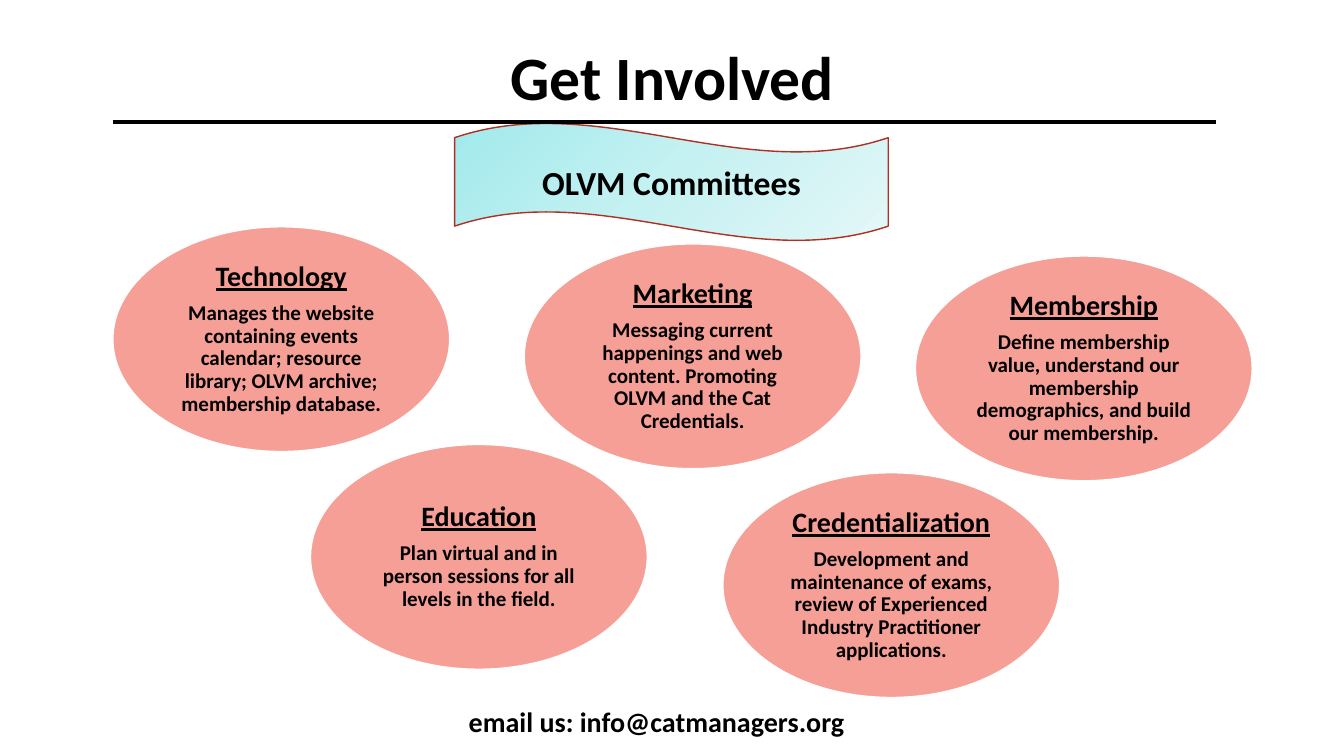
"""Builds the Get Involved slide with the OLVM committees."""
from copy import deepcopy

from lxml import etree
from pptx import Presentation
from pptx import util as u
from pptx.dml.color import RGBColor
from pptx.enum import shapes, text
from pptx.oxml.ns import qn

PX = u.Inches(1) // 100
THEME = {
    "font": "Calibri",
    "ink": RGBColor.from_string("000000"),
    "bubble": RGBColor.from_string("EC412E"),
    "bubble_alpha": "50000",
    "bubble_line": RGBColor.from_string("FFFFFF"),
    "banner_line": RGBColor.from_string("AF3022"),
    "banner_stops": [(0, "A2EAEC"), (50, "C6F1F2"), (100, "E3F7F8")],
    "title": 44, "banner": 24, "heading": 20, "body": 15,
}
CENTER, LEFT = text.PP_ALIGN.CENTER, text.PP_ALIGN.LEFT


def px(*lengths):
    return [length * PX for length in lengths]


def write(shape, paragraphs, inset, anchor=text.MSO_ANCHOR.MIDDLE):
    frame = shape.text_frame
    frame_format = {"word_wrap": True, "vertical_anchor": anchor}
    for side, margin in zip(("left", "top", "right", "bottom"), px(*inset)):
        frame_format[f"margin_{side}"] = margin
    for name, value in frame_format.items():
        setattr(frame, name, value)
    for index, (words, size, underline, paragraph_format) in enumerate(paragraphs):
        paragraph = frame.add_paragraph() if index else frame.paragraphs[0]
        for name, value in paragraph_format.items():
            setattr(paragraph, name, value)
        run = paragraph.add_run()
        run.text = words
        font_format = {"name": THEME["font"], "size": u.Pt(THEME[size]),
                       "bold": True, "underline": underline}
        for name, value in font_format.items():
            setattr(run.font, name, value)
        run.font.color.rgb = THEME["ink"]


presentation = Presentation()
presentation.slide_width, presentation.slide_height = px(1333, 750)
slide = presentation.slides.add_slide(presentation.slide_layouts[6])

BUBBLE_SIZE = (334, 223)
committees = [
    (112, 225, "Technology", "Manages the website containing events calendar; "
     "resource library; OLVM archive; membership database."),
    (308, 441, "Education",
     "Plan virtual and in person sessions for all levels in the field."),
    (520, 242, "Marketing", "Messaging current happenings and web content. "
     "Promoting OLVM and the Cat Credentials."),
    (717, 469, "Credentialization", "Development and maintenance of exams, "
     "review of Experienced Industry Practitioner applications."),
    (908, 254, "Membership", "Define membership value, understand our "
     "membership demographics, and build our membership."),
]
for left, top, name, duties in committees:
    bubble = slide.shapes.add_shape(
        shapes.MSO_SHAPE.OVAL, *px(left, top, *BUBBLE_SIZE))
    bubble.shadow.inherit = False
    bubble.fill.solid()
    bubble.fill.fore_color.rgb = THEME["bubble"]
    color = bubble.fill._xPr.find(qn("a:solidFill"))[0]
    etree.SubElement(color, qn("a:alpha"), val=THEME["bubble_alpha"])
    bubble.line.color.rgb = THEME["bubble_line"]
    bubble.line.width = u.Pt(1)
    spacing = {"alignment": CENTER, "line_spacing": 0.9}
    write(bubble, [
        (name, "heading", True, {**spacing, "space_after": u.Pt(7)}),
        (duties, "body", False, {**spacing, "space_after": u.Pt(5)}),
    ], (8, 8, 8, 8))

contact = slide.shapes.add_textbox(*px(455, 700, 818, 40))
write(contact, [("email us: info@catmanagers.org", "heading", False,
                 {"alignment": LEFT, "line_spacing": 0.8})],
      (10, 5, 10, 5), text.MSO_ANCHOR.TOP)

banner = slide.shapes.add_shape(shapes.MSO_SHAPE.WAVE, *px(451, 122, 430, 117))
banner.shadow.inherit = False
banner.fill.gradient()
banner.fill.gradient_angle = 315
stop_list = banner._element.find(".//" + qn("a:gsLst"))
stop_list.insert(1, deepcopy(stop_list[0]))
for stop, (percent, color) in zip(banner.fill.gradient_stops, THEME["banner_stops"]):
    stop.position = percent / 100
    stop.color.rgb = RGBColor.from_string(color)
banner.line.color.rgb = THEME["banner_line"]
banner.line.width = u.Pt(1)
write(banner, [("OLVM Committees", "banner", False, {"alignment": CENTER})],
      (10, 5, 10, 5))

title = slide.shapes.add_textbox(*px(92, 40, 1150, 80))
write(title, [("Get Involved", "title", False,
               {"alignment": CENTER, "line_spacing": 0.9})], (10, 5, 10, 5))

rule = slide.shapes.add_connector(
    shapes.MSO_CONNECTOR.STRAIGHT, *px(112, 121, 1206, 121))
rule.line.color.rgb = THEME["ink"]
rule.line.width = u.Pt(3)
etree.SubElement(rule._element.spPr, qn("a:effectLst"))

presentation.save("out.pptx")
